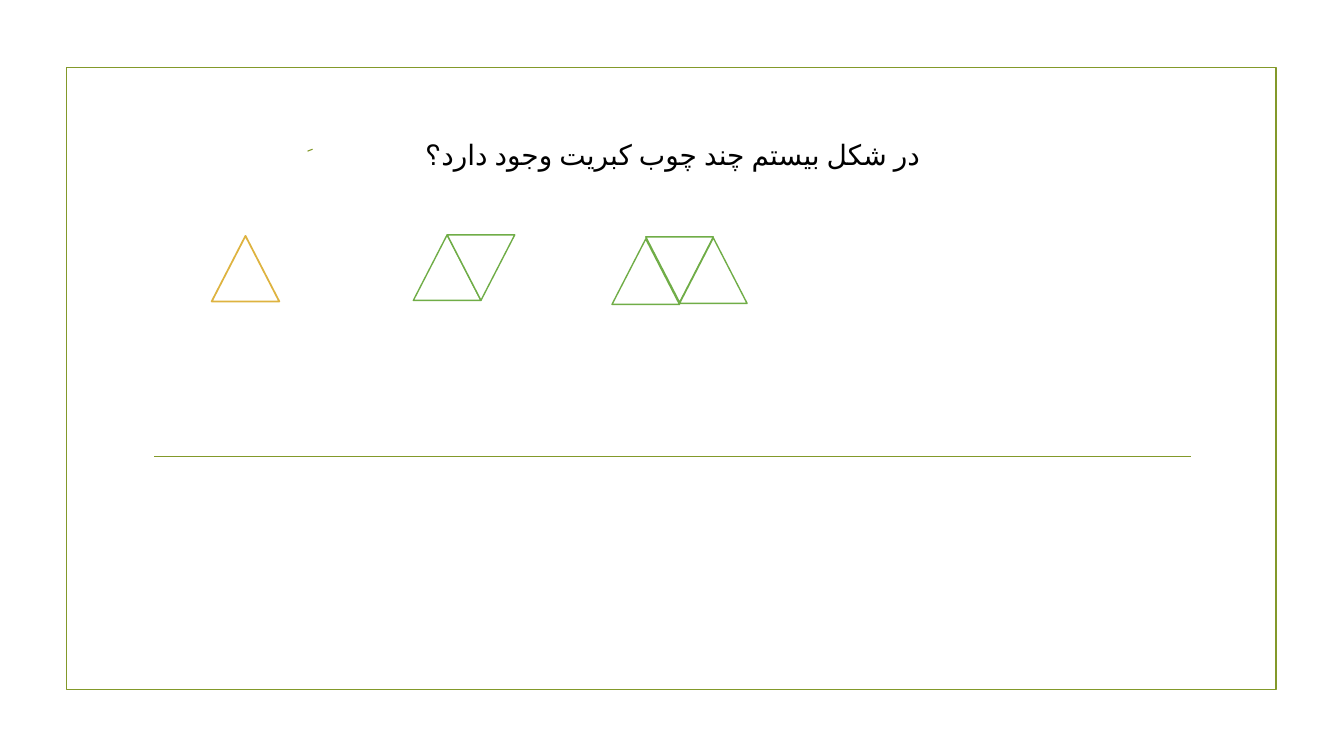
from dataclasses import dataclass

from lxml import etree
from pptx import Presentation
from pptx.dml.color import RGBColor
from pptx.enum import lang, shapes, text
from pptx.oxml import ns
from pptx.util import Inches, Pt


@dataclass(frozen=True)
class Theme:
    font: str = "Times New Roman"
    question_size: int = 20
    ink: str = "000000"
    paper: str = "FFFFFF"
    olive: str = "83992A"
    gold: str = "DEB340"
    green: str = "70AD47"


THEME = Theme()
MATCH_WIDTH = 0.67
MATCH_HEIGHT = 0.65


def style_line(line, color, weight):
    line.color.rgb = RGBColor.from_string(color)
    line.width = Pt(weight)


def add_outline(slide, preset, box, color, weight, fill=None):
    outline = slide.shapes.add_shape(preset, *map(Inches, box))
    outline.shadow.inherit = False
    if fill:
        outline.fill.solid()
        outline.fill.fore_color.rgb = RGBColor.from_string(fill)
    else:
        outline.fill.background()
    style_line(outline.line, color, weight)
    return outline


def add_rule(slide, start, end, weight):
    rule = slide.shapes.add_connector(
        shapes.MSO_CONNECTOR.STRAIGHT, *map(Inches, start + end))
    style_line(rule.line, THEME.olive, weight)
    etree.SubElement(rule.element.spPr, ns.qn("a:effectLst"))


def add_question(slide, wording):
    question = slide.shapes.title
    question.left, question.top = Inches(1.43), Inches(1.07)
    question.width, question.height = Inches(10.49), Inches(0.93)
    frame = question.text_frame
    frame.word_wrap = True
    frame.auto_size = text.MSO_AUTO_SIZE.NONE
    frame.vertical_anchor = text.MSO_ANCHOR.MIDDLE
    line = frame.paragraphs[0]
    line.alignment = text.PP_ALIGN.CENTER
    line.space_before = Pt(0)
    line.space_after = Pt(6)
    line._p.get_or_add_pPr().set("rtl", "1")
    run = line.add_run()
    run.text = wording
    run.font.name = THEME.font
    run.font.size = Pt(THEME.question_size)
    run.font.color.rgb = RGBColor.from_string(THEME.ink)
    run.font.language_id = lang.MSO_LANGUAGE_ID.FARSI


def add_match_figure(slide, left, tops, color, weight):
    for index, top in enumerate(tops):
        box = (left + index * MATCH_WIDTH / 2, top, MATCH_WIDTH, MATCH_HEIGHT)
        triangle = add_outline(
            slide, shapes.MSO_SHAPE.ISOSCELES_TRIANGLE, box, color, weight, THEME.paper)
        triangle.rotation = 180 * (index % 2)


def main():
    deck = Presentation()
    deck.slide_width, deck.slide_height = Inches(13.33), Inches(7.5)
    slide = deck.slides.add_slide(deck.slide_layouts[5])

    add_outline(slide, shapes.MSO_SHAPE.RECTANGLE, (0.66, 0.67, 12, 6.17), THEME.olive, 1.25)
    add_rule(slide, (1.53, 4.53), (11.81, 4.53), 1.25)
    add_question(slide, "در شکل بیستم چند چوب کبریت وجود دارد؟")
    add_rule(slide, (3.1, 1.48), (3.05, 1.5), 0.75)

    add_match_figure(slide, 2.1, [2.34], THEME.gold, 1.25)
    add_match_figure(slide, 4.1, [2.33, 2.33], THEME.green, 1)
    add_match_figure(slide, 6.07, [2.37, 2.35, 2.36], THEME.green, 1)

    deck.save("out.pptx")


if __name__ == "__main__":
    main()
